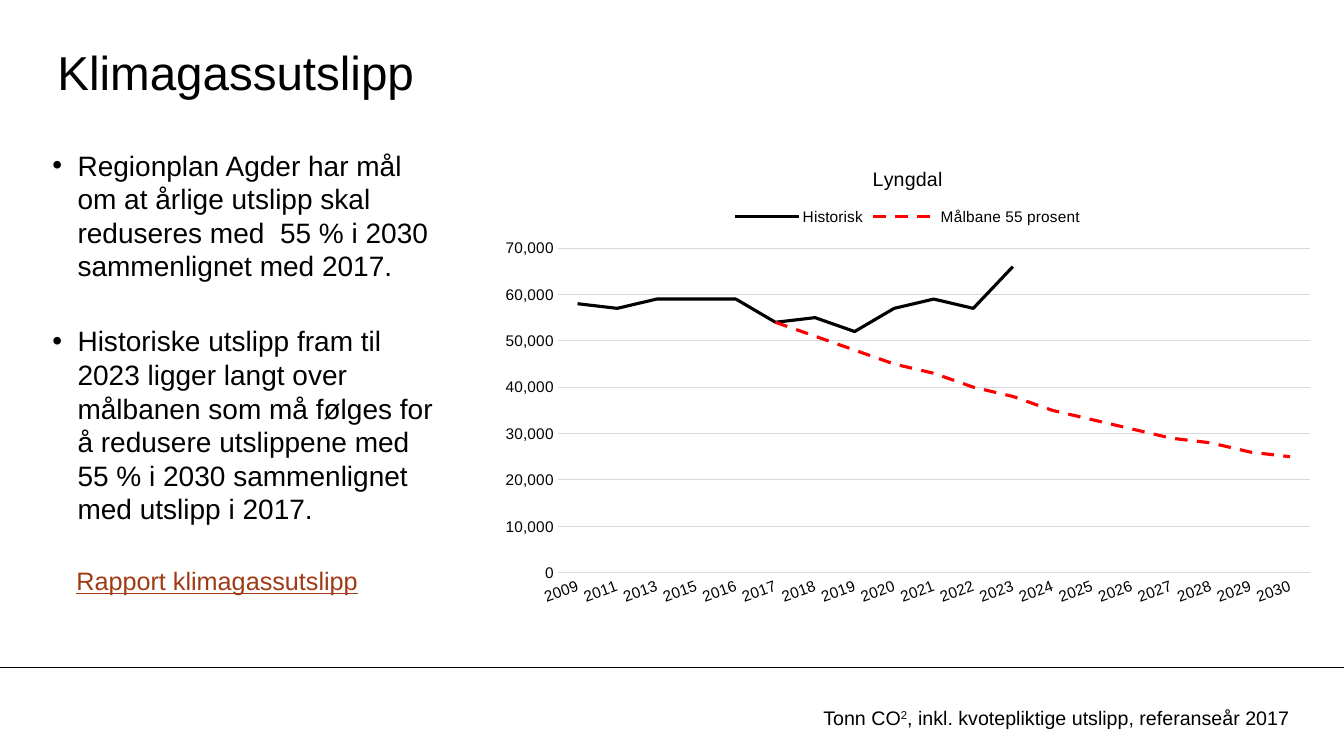
"""Build the slide on greenhouse gas emissions in Lyngdal."""
from lxml import etree
from pptx import Presentation
from pptx.chart.data import CategoryChartData
from pptx.dml.color import RGBColor
from pptx.enum.chart import XL_CHART_TYPE, XL_LEGEND_POSITION, XL_TICK_MARK
from pptx.enum.dml import MSO_LINE
from pptx.enum.shapes import MSO_CONNECTOR
from pptx.enum.text import MSO_ANCHOR, PP_ALIGN
from pptx.oxml.ns import qn
from pptx.util import Pt

LINE_CHART = XL_CHART_TYPE.LINE
STRAIGHT = MSO_CONNECTOR.STRAIGHT
NO_TICK = XL_TICK_MARK.NONE
TOP = XL_LEGEND_POSITION.TOP
LEFT = PP_ALIGN.LEFT
MIDDLE = MSO_ANCHOR.MIDDLE
DASH = MSO_LINE.DASH
COLORS = {"text": "000000", "link": "9F3A14", "grid": "D9D9D9", "target": "FF0000"}
NO_MARGINS = {"margin_left": 0, "margin_top": 0, "margin_right": 0, "margin_bottom": 0}


def style_font(font, size, color="text", **extras):
    for name, value in {"name": "Arial", "size": Pt(size), "bold": False, **extras}.items():
        setattr(font, name, value)
    font.color.rgb = RGBColor.from_string(COLORS[color])


def style_line(line, color, width):
    line.color.rgb = RGBColor.from_string(COLORS[color])
    line.width = Pt(width)


prs = Presentation()
prs.slide_width, prs.slide_height = Pt(960), Pt(540)
slide = prs.slides.add_slide(prs.slide_layouts[5])
shapes = slide.shapes

footer_rule = shapes.add_connector(STRAIGHT, Pt(0), Pt(476.6), Pt(960), Pt(476.6))
style_line(footer_rule.line, "text", 0.75)
etree.SubElement(footer_rule._element.spPr, qn("a:effectLst"))

heading = shapes.title
heading.left, heading.top, heading.width, heading.height = Pt(41), Pt(24), Pt(799), Pt(54)
heading_frame = heading.text_frame
for name, value in {**NO_MARGINS, "vertical_anchor": MIDDLE}.items():
    setattr(heading_frame, name, value)
heading_frame.text = "Klimagassutslipp"
heading_frame.paragraphs[0].alignment = LEFT
style_font(heading_frame.paragraphs[0].font, 34)

goals = [
    "Regionplan Agder har mål om at årlige utslipp skal reduseres med  55 % i 2030 sammenlignet med 2017.",
    "Historiske utslipp fram til 2023 ligger langt over målbanen som må følges for "
    "å redusere utslippene med 55 % i 2030 sammenlignet med utslipp i 2017.",
]
goals_frame = shapes.add_textbox(Pt(37.4), Pt(105.8), Pt(274.3), Pt(276.5)).text_frame
for name, value in {**NO_MARGINS, "word_wrap": True}.items():
    setattr(goals_frame, name, value)
for index, goal in enumerate(goals):
    paragraph = goals_frame.add_paragraph() if index else goals_frame.paragraphs[0]
    paragraph.text = goal
    if index:
        paragraph.space_before = Pt(29.5)
    properties = paragraph._p.get_or_add_pPr()
    properties.set("marL", str(Pt(18)))
    properties.set("indent", str(-Pt(18)))
    etree.SubElement(properties, qn("a:buFont")).set("typeface", "Arial")
    etree.SubElement(properties, qn("a:buChar")).set("char", "•")
    style_font(paragraph.font, 20)

unit_frame = shapes.add_textbox(Pt(581), Pt(500.4), Pt(366.5), Pt(24.5)).text_frame
unit_frame.word_wrap = True
for part in ["Tonn CO", "2", ", inkl. kvotepliktige utslipp, referanseår 2017"]:
    run = unit_frame.paragraphs[0].add_run()
    run.text = part
    style_font(run.font, 14)
    if part == "2":
        run.font._element.set("baseline", "30000")

report_frame = shapes.add_textbox(Pt(47.5), Pt(400.3), Pt(227.5), Pt(28.8)).text_frame
report_frame.word_wrap = True
report_run = report_frame.paragraphs[0].add_run()
report_run.text = "Rapport klimagassutslipp"
style_font(report_run.font, 18, "link", underline=True)

history = [58000, 57000, 59000, 59000, 59000, 54000, 55000, 52000, 57000, 59000, 57000, 66000]
target = [54000, 51000, 48000, 45000, 43000, 40000, 38000, 35000, 33000, 31000, 29000, 28000, 26000, 25000]
years = [2009, 2011, 2013, *range(2015, 2031)]
emissions = CategoryChartData(number_format="#,##0")
emissions.categories = [str(year) for year in years]
emissions.add_series("Historisk", history + [None] * (len(years) - len(history)))
emissions.add_series("Målbane 55 prosent", [None] * (len(years) - len(target)) + target)
chart = shapes.add_chart(LINE_CHART, Pt(349.2), Pt(105.8), Pt(598.3), Pt(333.4), emissions).chart
style_font(chart.font, 10)

chart.has_title = True
chart.chart_title.include_in_layout = False
chart.chart_title.text_frame.text = "Lyngdal"
style_font(chart.chart_title.text_frame.paragraphs[0].runs[0].font, 14)
chart.has_legend = True
chart.legend.position = TOP
chart.legend.include_in_layout = False
style_font(chart.legend.font, 11)

for axis, number_format in [(chart.category_axis, "0"), (chart.value_axis, "#,##0")]:
    axis.major_tick_mark = axis.minor_tick_mark = NO_TICK
    axis.tick_labels.number_format = number_format
    axis.tick_labels.number_format_is_linked = False
    style_font(axis.tick_labels.font, 11)
year_label_body = chart.category_axis._element.find(qn("c:txPr")).find(qn("a:bodyPr"))
year_label_body.set("rot", str(-20 * 60000))
style_line(chart.category_axis.format.line, "grid", 0.75)
chart.value_axis.format.line.fill.background()
style_line(chart.value_axis.major_gridlines.format.line, "grid", 0.75)
chart.value_axis.minimum_scale, chart.value_axis.maximum_scale = 0, 70000
chart.value_axis.major_unit = 10000

chart.plots[0].vary_by_categories = False
for series, color in zip(chart.plots[0].series, ["text", "target"]):
    series.smooth = False
    style_line(series.format.line, color, 2.25)
chart.plots[0].series[1].format.line.dash_style = DASH

prs.save("out.pptx")
